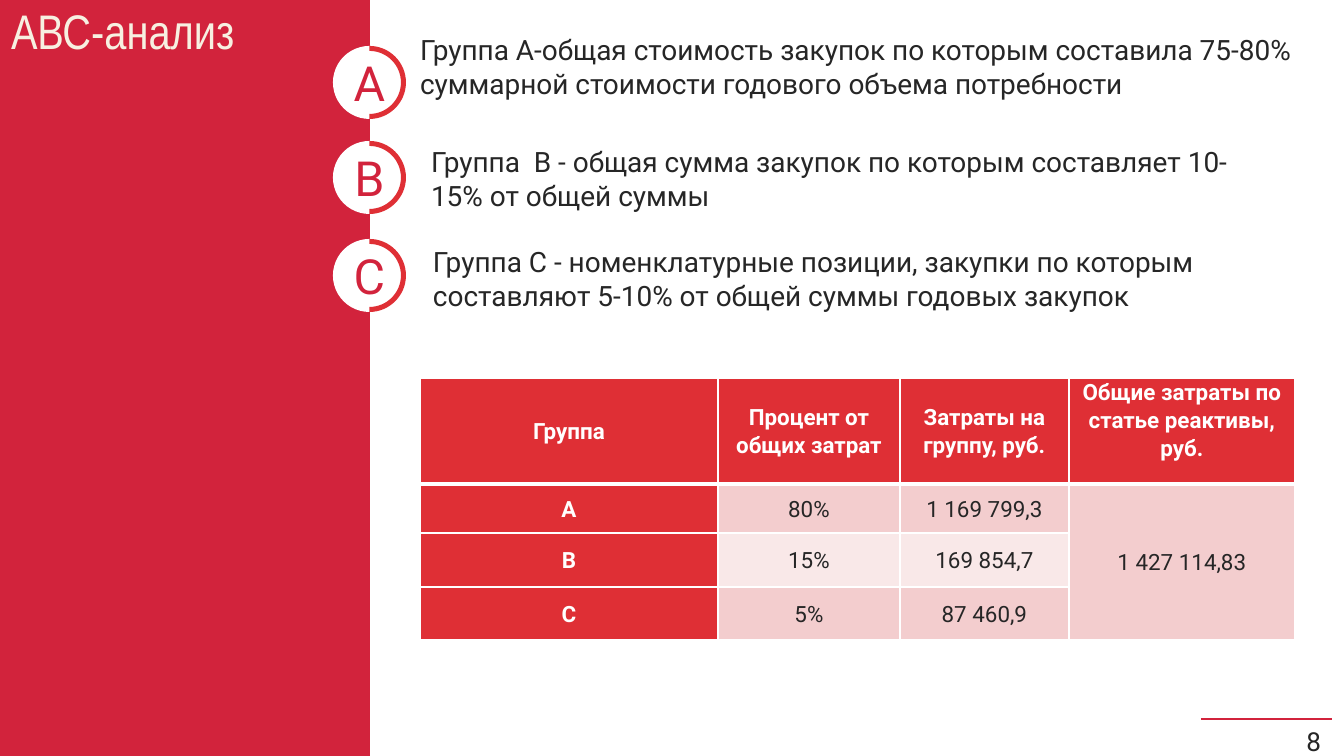
from lxml import etree
from pptx import Presentation
from pptx.dml.color import RGBColor
from pptx.enum.shapes import MSO_CONNECTOR, MSO_SHAPE
from pptx.enum.text import MSO_ANCHOR, MSO_AUTO_SIZE, PP_ALIGN
from pptx.oxml.ns import qn
from pptx.util import Emu, Pt

RECT, OVAL, STRAIGHT = MSO_SHAPE.RECTANGLE, MSO_SHAPE.OVAL, MSO_CONNECTOR.STRAIGHT
TOP, MIDDLE = MSO_ANCHOR.TOP, MSO_ANCHOR.MIDDLE
LEFT, CENTER, RIGHT = PP_ALIGN.LEFT, PP_ALIGN.CENTER, PP_ALIGN.RIGHT
NO_FIT = MSO_AUTO_SIZE.NONE

EMU_PER_PX = 9144000 / 1344
SLIDE_WIDTH, SLIDE_HEIGHT = 1344, 756
CRIMSON = RGBColor(0xD2, 0x23, 0x3C)
RED = RGBColor(0xDF, 0x2F, 0x35)
CREAM = RGBColor(0xF7, 0xF0, 0xE1)
WHITE = RGBColor(0xFF, 0xFF, 0xFF)
DARK = RGBColor(0x26, 0x26, 0x26)
PINK = RGBColor(0xF3, 0xCD, 0xCE)
PALE_PINK = RGBColor(0xF9, 0xE8, 0xE8)

BADGE_LEFT, BADGE_SIZE, RING_WIDTH = 333, 73, 5
CURVE_RATIO = 0.55
GROUPS = [
    ("А", 46, (407, 26, 900, 82),
     "Группа А-общая стоимость закупок по которым составила 75-80% "
     "суммарной стоимости годового объема потребности"),
    ("В", 141, (418, 138, 867, 82),
     "Группа  В - общая сумма закупок по которым составляет 10-15% от общей суммы"),
    ("С", 239, (420, 238, 874, 82),
     "Группа С - номенклатурные позиции, закупки по которым "
     "составляют 5-10% от общей суммы годовых закупок"),
]
COSTS = [
    ["Группа", "Процент от общих затрат", "Затраты на группу, руб.",
     "Общие затраты по статье реактивы, руб."],
    ["А", "80%", "1 169 799,3", "1 427 114,83"],
    ["В", "15%", "169 854,7", ""],
    ["С", "5%", "87 460,9", ""],
]
COLUMN_WIDTHS = [298, 182, 169, 226]
ROW_HEIGHTS = [106, 49, 54, 53]


def px(*lengths):
    """Turn px lengths into a list of EMU."""
    return [Emu(round(length * EMU_PER_PX)) for length in lengths]


def apply_format(target, values):
    """Set each attribute named in values."""
    for name, value in values.items():
        setattr(target, name, value)


def write(frame, text, size, color, face="Roboto", bold=False, align=LEFT, spacing=1.0):
    """Put one formatted paragraph into a text frame."""
    paragraph = frame.paragraphs[0]
    run = paragraph.add_run()
    run.text = text
    apply_format(paragraph, {"alignment": align, "line_spacing": spacing})
    apply_format(run.font, {"name": face, "size": Pt(size), "bold": bold})
    run.font.color.rgb = color


def set_frame(frame, margins=(13, 7, 13, 7), anchor=TOP):
    """Set wrapping, margins and anchor of a text frame."""
    left, top, right, bottom = px(*margins)
    apply_format(frame, {
        "word_wrap": True, "auto_size": NO_FIT, "vertical_anchor": anchor,
        "margin_left": left, "margin_top": top,
        "margin_right": right, "margin_bottom": bottom})


def paint(shape, color):
    """Give a shape a flat fill without line or shadow."""
    shape.shadow.inherit = False
    shape.fill.solid()
    shape.fill.fore_color.rgb = color
    shape.line.fill.background()


def add_label(shapes, box, text, size, color, align=LEFT, **frame_format):
    """Add a text box holding one paragraph."""
    frame = shapes.add_textbox(*px(*box)).text_frame
    set_frame(frame, **frame_format)
    write(frame, text, size, color, align=align)


def add_panel(slide, width):
    """Add the coloured side panel over the full slide height."""
    panel = slide.shapes.add_shape(RECT, *px(0, 0, width, SLIDE_HEIGHT))
    paint(panel, CRIMSON)


def format_title(slide, text):
    """Place the title on top of the side panel."""
    title = slide.shapes.title
    slide.shapes._spTree.append(title._element)
    left, top, width, height = px(0, 8, 366, 159)
    apply_format(title, {"left": left, "top": top, "width": width, "height": height})
    set_frame(title.text_frame, margins=(11, 0, 0, 0))
    write(title.text_frame, text, 26, CREAM, face="Arial Narrow", spacing=0.9)


def half_circle(x, y, radius):
    """Return nodes and handles of the right half circle, top to bottom."""
    handle = radius * CURVE_RATIO
    return [px(x + dx, y + dy) for dx, dy in (
        (0, -radius), (handle, -radius), (radius, -handle), (radius, 0),
        (radius, handle), (handle, radius), (0, radius))]


def curve_segments(freeform):
    """Merge the straight segments of each half circle into cubic curves."""
    segments = list(freeform._element.iter(qn("a:lnTo")))
    for start in (0, 3, 7, 10):
        first, *others = segments[start:start + 3]
        first.tag = qn("a:cubicBezTo")
        for segment in others:
            first.append(segment[0])
            segment.getparent().remove(segment)


def add_half_ring(shapes, x, y, radius):
    """Add the right half of a ring."""
    outline = half_circle(x, y, radius) + half_circle(x, y, radius - RING_WIDTH)[::-1]
    builder = shapes.build_freeform(*outline[0], scale=1.0)
    builder.add_line_segments(outline[1:], close=True)
    ring = builder.convert_to_shape()
    curve_segments(ring)
    paint(ring, RED)


def add_badge(slide, letter, top):
    """Add a white disc with a half ring and a letter."""
    shapes = slide.shapes.add_group_shape().shapes
    box = (BADGE_LEFT, top, BADGE_SIZE, BADGE_SIZE)
    radius = BADGE_SIZE / 2
    paint(shapes.add_shape(OVAL, *px(*box)), WHITE)
    add_half_ring(shapes, BADGE_LEFT + radius, top + radius, radius)
    add_label(shapes, box, letter, 25.9, CRIMSON, CENTER,
              margins=(0, 0, 0, 0), anchor=MIDDLE)


def add_border(cell, side, points):
    """Add a white border to one side of a cell."""
    line = etree.SubElement(cell._tc.get_or_add_tcPr(), qn(f"a:ln{side}"),
                            w=str(Pt(points)))
    fill = etree.SubElement(line, qn("a:solidFill"))
    etree.SubElement(fill, qn("a:srgbClr"), val=str(WHITE))


def format_cell(cell, row, column, text):
    """Fill, border and write one table cell."""
    strong = row == 0 or column == 0
    for side in "LRTB":
        heavy = (row, side) in ((0, "B"), (1, "T"))
        add_border(cell, side, 3 if heavy else 1)
    cell.fill.solid()
    banded = PALE_PINK if row == 2 and column < 3 else PINK
    cell.fill.fore_color.rgb = RED if strong else banded
    side_margin, = px(9)
    apply_format(cell, {
        "margin_left": side_margin, "margin_right": side_margin,
        "margin_top": 0, "margin_bottom": 0,
        "vertical_anchor": TOP if (row, column) == (0, 3) else MIDDLE})
    if text:
        write(cell.text_frame, text, 12, WHITE if strong else DARK,
              bold=strong, align=CENTER, spacing=1.07)


def add_cost_table(slide, left, top):
    """Add the table of costs by group."""
    size = px(left, top, sum(COLUMN_WIDTHS), sum(ROW_HEIGHTS))
    table = slide.shapes.add_table(len(ROW_HEIGHTS), len(COLUMN_WIDTHS), *size).table
    for column, width in zip(table.columns, px(*COLUMN_WIDTHS)):
        column.width = width
    for row, height in zip(table.rows, px(*ROW_HEIGHTS)):
        row.height = height
    for row, texts in enumerate(COSTS):
        for column, text in enumerate(texts):
            format_cell(table.cell(row, column), row, column, text)
    table.cell(1, 3).merge(table.cell(3, 3))


def add_page_number(slide, number):
    """Add the page number under its rule."""
    rule = slide.shapes.add_connector(STRAIGHT, *px(1201, 719, 1332, 719))
    rule.line.color.rgb = CRIMSON
    rule.line.width = Pt(1.5)
    etree.SubElement(rule._element.spPr, qn("a:effectLst"))
    add_label(slide.shapes, (1201, 720, 132, 31), number, 14, DARK, RIGHT,
              margins=(12, 5, 12, 5))


def main():
    """Build the slide and save it."""
    deck = Presentation()
    deck.slide_width, deck.slide_height = px(SLIDE_WIDTH, SLIDE_HEIGHT)
    slide = deck.slides.add_slide(deck.slide_layouts[5])
    add_page_number(slide, "8")
    add_panel(slide, 370)
    format_title(slide, "АВС-анализ")
    for letter, badge_top, box, text in GROUPS:
        add_badge(slide, letter, badge_top)
        add_label(slide.shapes, box, text, 15, DARK)
    add_cost_table(slide, 420, 378)
    deck.save("out.pptx")


if __name__ == "__main__":
    main()
